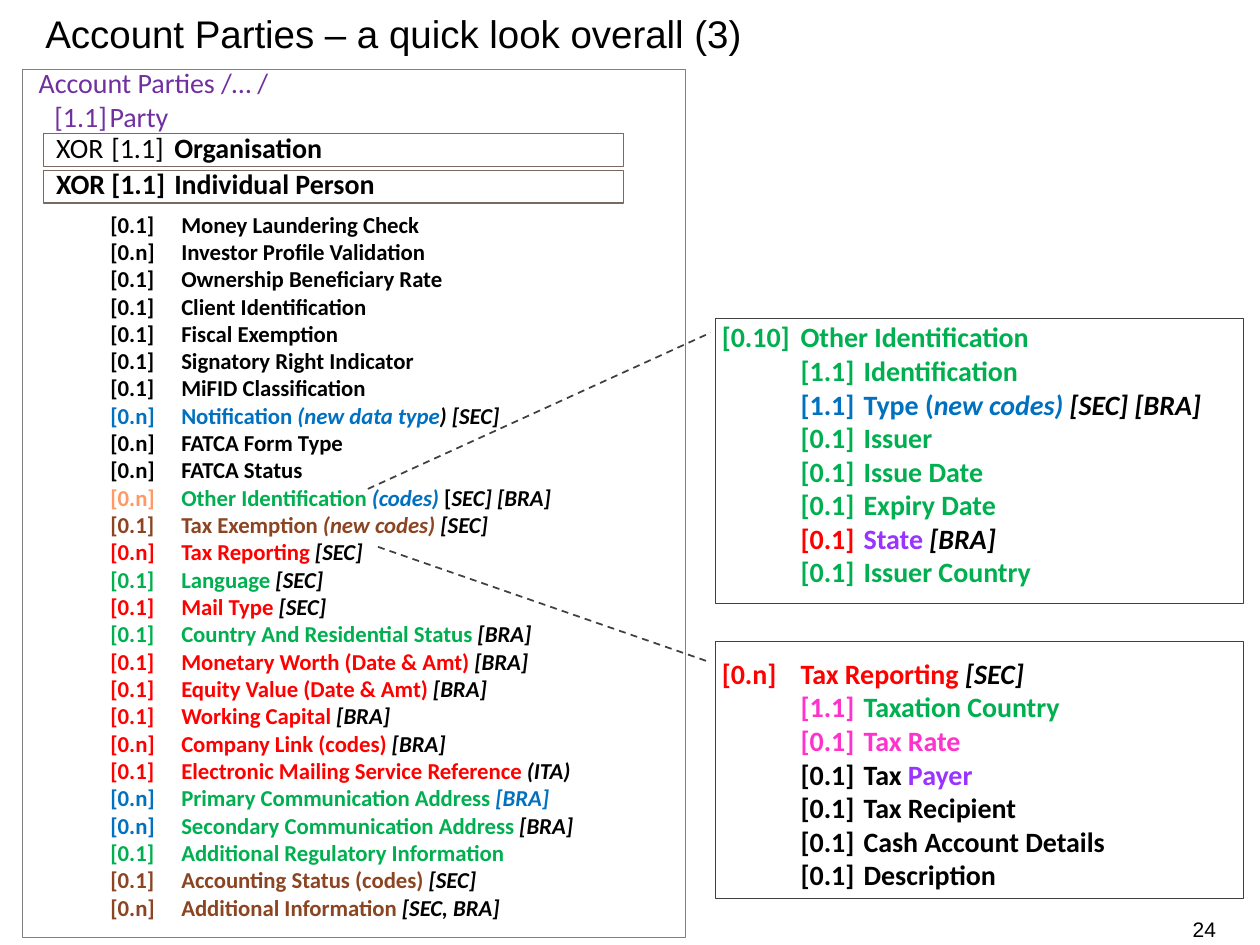
from lxml.etree import SubElement
from pptx import Presentation
from pptx.dml.color import RGBColor
from pptx.enum.dml import MSO_LINE
from pptx.enum.shapes import MSO_CONNECTOR, MSO_SHAPE
from pptx.enum.text import MSO_ANCHOR, PP_ALIGN
from pptx.oxml.ns import qn
from pptx.util import Pt

COLORS = {
    "black": "000000", "white": "FFFFFF", "green": "00B050", "blue": "0070C0",
    "red": "FF0000", "violet": "9933FF", "purple": "7030A0", "pink": "FF33CC",
    "orange": "FF9966", "brown": "8B4522", "dark": "404040", "grey": "808080",
    "taupe": "766A62",
}


def color(name):
    return RGBColor.from_string(COLORS[name])


def tag(text):
    return (text, "black", True)


SEC, BRA = tag("[SEC]"), tag("[BRA]")

PERSON_ITEMS = [
    [("[0.1]\tMoney Laundering Check", "black")],
    [("[0.n]\tInvestor Profile Validation", "black")],
    [("[0.1]\tOwnership Beneficiary Rate", "black")],
    [("[0.1]\tClient Identification", "black")],
    [("[0.1]\tFiscal Exemption", "black")],
    [("[0.1]\tSignatory Right Indicator", "black")],
    [("[0.1]\tMiFID Classification", "black")],
    [("[0.n]\tNotification ", "blue"), ("(new data type", "blue", True), tag(") [SEC]")],
    [("[0.n]\tFATCA Form Type", "black")],
    [("[0.n]\tFATCA Status", "black")],
    [("[0.n]\t", "orange"), ("Other Identification ", "green"),
     ("(codes) ", "blue", True), ("[", "black"), tag("SEC] [BRA]")],
    [("[0.1]\tTax Exemption ", "brown"), ("(new codes) ", "brown", True), SEC],
    [("[0.n]\tTax Reporting ", "red"), SEC],
    [("[0.1]\tLanguage ", "green"), SEC],
    [("[0.1]\tMail Type ", "red"), SEC],
    [("[0.1]\tCountry And Residential Status ", "green"), BRA],
    [("[0.1]\tMonetary Worth (Date & Amt) ", "red"), BRA],
    [("[0.1]\tEquity Value (Date & Amt) ", "red"), BRA],
    [("[0.1]\tWorking Capital ", "red"), BRA],
    [("[0.n]\tCompany Link (codes) ", "red"), BRA],
    [("[0.1]\tElectronic Mailing Service Reference ", "red"), tag("(ITA)")],
    [("[0.n]\t", "blue"), ("Primary Communication Address ", "green"), ("[BRA]", "blue", True)],
    [("[0.n]\t", "blue"), ("Secondary Communication Address ", "green"), BRA],
    [("[0.1]\tAdditional Regulatory Information", "green")],
    [("[0.1]\tAccounting Status (codes) ", "brown"), SEC],
    [("[0.n]\tAdditional Information ", "brown"), tag("[SEC, BRA]")],
]

OTHER_IDENTIFICATION = [
    [("[0.10]\tOther Identification", "green")],
    [("\t[1.1]\tIdentification", "green")],
    [("\t[1.1]\tType (", "blue"), ("new codes) ", "blue", True), tag("[SEC] [BRA]")],
    [("\t[0.1]\tIssuer", "green")],
    [("\t[0.1]\tIssue Date", "green")],
    [("\t[0.1]\tExpiry Date", "green")],
    [("\t[0.1]\t", "red"), ("State ", "violet"), BRA],
    [("\t[0.1]\tIssuer Country", "green")],
]

TAX_REPORTING = [
    [("[0.n]\tTax Reporting ", "red"), SEC],
    [("\t[1.1]", "pink"), ("\tTaxation Country", "green")],
    [("\t[0.1]\tTax Rate", "pink")],
    [("\t[0.1]\tTax ", "black"), ("Payer", "violet")],
    [("\t[0.1]\tTax Recipient", "black")],
    [("\t[0.1]\tCash Account Details", "black")],
    [("\t[0.1]\tDescription", "black")],
]


def add_frame(slide, box, line, fill=None):
    frame = slide.shapes.add_shape(MSO_SHAPE.RECTANGLE, *map(Pt, box))
    frame.shadow.inherit = False
    if fill:
        frame.fill.solid()
        frame.fill.fore_color.rgb = color(fill)
    else:
        frame.fill.background()
    frame.line.color.rgb = color(line)
    frame.line.width = Pt(0.75)


def add_tabs(paragraph, stops):
    tab_list = SubElement(paragraph._p.get_or_add_pPr(), qn("a:tabLst"))
    for stop in stops:
        SubElement(tab_list, qn("a:tab"), pos=str(Pt(stop)), algn="l")


def add_items(slide, box, items, size, stops, bold=True):
    text = slide.shapes.add_textbox(*map(Pt, box)).text_frame
    text.word_wrap = True
    for index, runs in enumerate(items):
        paragraph = text.paragraphs[0] if index == 0 else text.add_paragraph()
        add_tabs(paragraph, stops)
        paragraph.font.name = "Calibri"
        paragraph.font.size = Pt(size)
        paragraph.font.bold = bold
        for words, shade, *italic in runs:
            run = paragraph.add_run()
            run.text = words
            run.font.color.rgb = color(shade)
            if italic:
                run.font.italic = True
    return text.paragraphs


def add_title(slide, box):
    title = slide.shapes.title
    title.left, title.top, title.width, title.height = map(Pt, box)
    title.text_frame.text = "Account Parties – a quick look overall (3)"
    title.text_frame.vertical_anchor = MSO_ANCHOR.MIDDLE
    heading = title.text_frame.paragraphs[0]
    heading.alignment = PP_ALIGN.LEFT
    heading.font.name = "Arial"
    heading.font.size = Pt(22)
    heading.font.color.rgb = color("black")


def add_party_panel(slide, box):
    left, top, width, height = box
    add_frame(slide, box, "grey", "white")
    party = add_items(slide, (left + 2, top - 1.4, 290, 42),
                      [[("Account Parties /… /", "purple")], [("\t[1.1]\tParty", "purple")]],
                      16, (9, 40.5), bold=False)
    party[0].line_spacing = Pt(15)

    choices = add_items(slide, (left + 12, top + 35.4, 300, 44),
                        [[("XOR\t[1.1]\t", "black"), ("Organisation", "black")],
                         [("XOR\t[1.1]\tIndividual Person", "black")]],
                        16, (31.5, 67.5))
    for choice in choices:
        choice.line_spacing = Pt(15)
    choices[0].space_after = Pt(6)
    choices[0].runs[0].font.bold = False
    for row in range(2):
        add_frame(slide, (left + 12, top + 36.7 + 21 * row, 331.2, 18.7), "taupe")

    add_items(slide, (left + 43, top + 77, 343.5, 417), PERSON_ITEMS, 13, (40.5,))


def add_detail_panel(slide, box, items, text_offset):
    left, top, width, height = box
    add_frame(slide, box, "dark", "white")
    add_items(slide, (left - 3.6, top + text_offset, width + 8, height), items, 16, (45, 81))


def add_leader(slide, start, end):
    leader = slide.shapes.add_connector(MSO_CONNECTOR.STRAIGHT, *map(Pt, start + end))
    SubElement(leader._element.spPr, qn("a:effectLst"))
    leader.line.color.rgb = color("dark")
    leader.line.width = Pt(1)
    leader.line.dash_style = MSO_LINE.DASH


def add_page_number(slide, box):
    text = slide.shapes.add_textbox(*map(Pt, box)).text_frame
    text.word_wrap = True
    text.vertical_anchor = MSO_ANCHOR.MIDDLE
    number = text.paragraphs[0]
    number.text = "24"
    number.alignment = PP_ALIGN.RIGHT
    number.font.name = "Arial"
    number.font.size = Pt(12)
    number.font.color.rgb = color("black")


def main():
    deck = Presentation()
    deck.slide_width, deck.slide_height = Pt(720), Pt(540)
    slide = deck.slides.add_slide(deck.slide_layouts[5])
    add_title(slide, (18.7, 1.4, 600, 34.6))
    add_party_panel(slide, (13, 39.6, 378.7, 496))
    add_detail_panel(slide, (409, 182.2, 301.7, 162.7), OTHER_IDENTIFICATION, -2.9)
    add_detail_panel(slide, (409, 366.5, 301.7, 146.9), TAX_REPORTING, 5)
    add_leader(slide, (210.2, 279.4), (406.1, 190.1))
    add_leader(slide, (216, 312.5), (404.6, 378))
    add_page_number(slide, (642.2, 522, 59.8, 18))
    deck.save("out.pptx")


if __name__ == "__main__":
    main()
